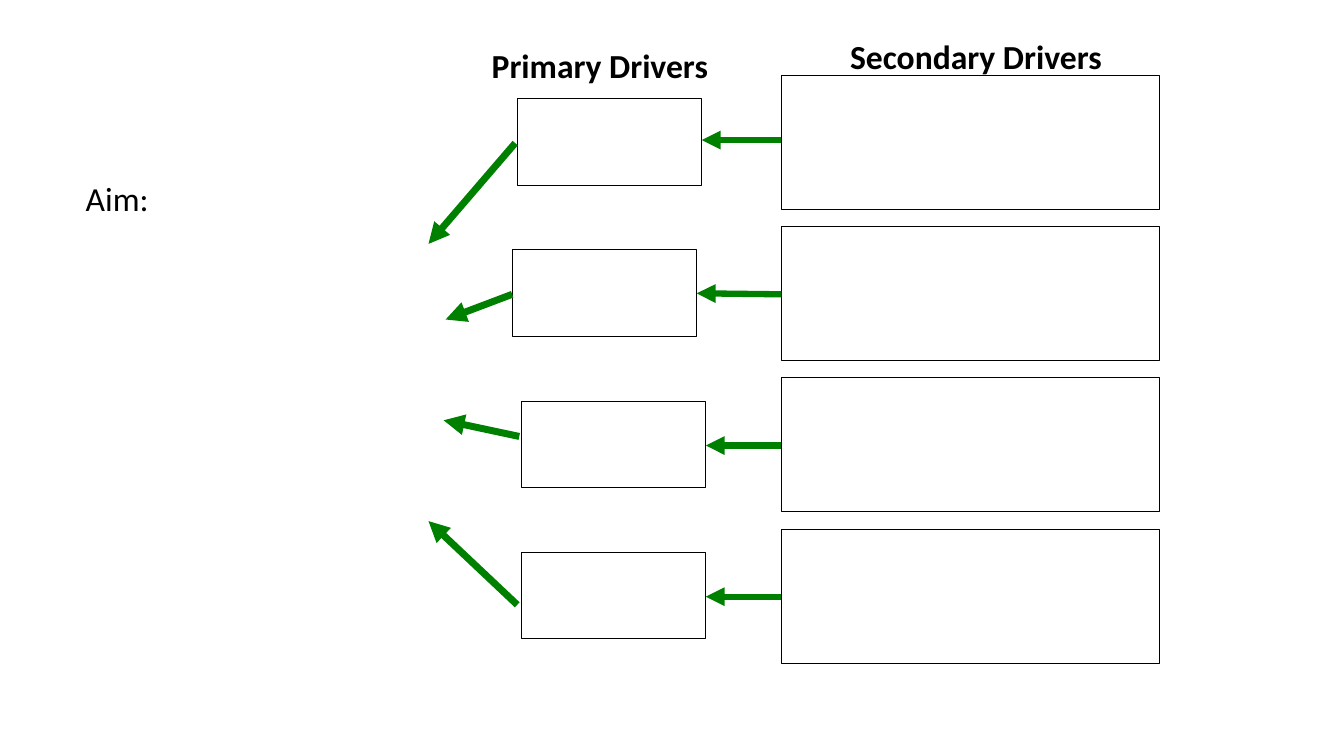
from lxml import etree
from pptx import Presentation
from pptx.dml.color import RGBColor
from pptx.enum.shapes import MSO_CONNECTOR as Connector, MSO_SHAPE as Shape
from pptx.enum.text import MSO_ANCHOR as Anchor, PP_ALIGN as Align
from pptx.oxml.ns import qn
from pptx.util import Inches, Pt

BLACK = RGBColor(0x00, 0x00, 0x00)
WHITE = RGBColor(0xFF, 0xFF, 0xFF)
GREEN = RGBColor(0x00, 0x80, 0x00)

ROW_PITCH = 1.5
PRIMARY_TOP, PRIMARY_SIZE = 0.98, (1.83, 0.86)
SECONDARY_LEFT, SECONDARY_TOP, SECONDARY_SIZE = 7.75, 0.75, (3.75, 1.33)

DRIVER_ROWS = [
    {"primary_left": 5.13, "link_y": (1.39, 1.39), "to_aim": (5.11, 1.42, 4.25, 2.42)},
    {"primary_left": 5.08, "link_y": (2.92, 2.91), "to_aim": (5.08, 2.92, 4.42, 3.17)},
    {"primary_left": 5.17, "link_y": (4.42, 4.42), "to_aim": (5.15, 4.33, 4.40, 4.17)},
    {"primary_left": 5.17, "link_y": (5.92, 5.92), "to_aim": (5.13, 6.00, 4.25, 5.17)},
]


class DriverDiagram:
    font = {"name": "Calibri", "size": Pt(24)}

    def __init__(self, slide):
        self.shapes = slide.shapes

    def label(self, text, left, top, width, height, align=Align.CENTER,
              bold=True, inset_left=0.06, inset_top=0.03):
        frame = self.shapes.add_textbox(
            *map(Inches, (left, top, width, height))).text_frame
        layout = {
            "word_wrap": True,
            "vertical_anchor": Anchor.TOP,
            "margin_left": Inches(inset_left),
            "margin_top": Inches(inset_top),
            "margin_right": Inches(0.06),
            "margin_bottom": Inches(0.03),
        }
        for name, value in layout.items():
            setattr(frame, name, value)
        paragraph = frame.paragraphs[0]
        paragraph.alignment = align
        run = paragraph.add_run()
        run.text = text
        for name, value in {**self.font, "bold": bold}.items():
            setattr(run.font, name, value)
        run.font.color.rgb = BLACK

    def box(self, left, top, width, height):
        driver = self.shapes.add_shape(
            Shape.RECTANGLE, *map(Inches, (left, top, width, height)))
        driver.shadow.inherit = False
        driver.fill.solid()
        driver.fill.fore_color.rgb = WHITE
        driver.line.color.rgb = BLACK
        driver.line.width = Pt(0.75)

    def arrow(self, start_x, start_y, end_x, end_y, weight):
        link = self.shapes.add_connector(
            Connector.STRAIGHT, *map(Inches, (start_x, start_y, end_x, end_y)))
        link.line.color.rgb = GREEN
        link.line.width = Pt(weight)
        properties = link.element.spPr
        outline = properties.find(qn("a:ln"))
        etree.SubElement(outline, qn("a:tailEnd"), type="triangle")
        etree.SubElement(properties, qn("a:effectLst"))


def main():
    deck = Presentation()
    deck.slide_width, deck.slide_height = Inches(13.33), Inches(7.5)
    diagram = DriverDiagram(deck.slides.add_slide(deck.slide_layouts[6]))

    diagram.label("Aim:", 0.6, 1.46, 2.17, 3.42, align=Align.LEFT,
                  bold=False, inset_left=0.25, inset_top=0.3)
    diagram.label("Primary Drivers", 4.15, 0.42, 3.6, 0.5)
    diagram.label("Secondary Drivers", 7.69, 0.33, 3.98, 0.33)

    for index, row in enumerate(DRIVER_ROWS):
        offset = index * ROW_PITCH
        primary_left = row["primary_left"]
        start_y, end_y = row["link_y"]
        diagram.box(primary_left, PRIMARY_TOP + offset, *PRIMARY_SIZE)
        diagram.box(SECONDARY_LEFT, SECONDARY_TOP + offset, *SECONDARY_SIZE)
        diagram.arrow(*row["to_aim"], weight=5)
        diagram.arrow(SECONDARY_LEFT, start_y,
                      primary_left + PRIMARY_SIZE[0], end_y, weight=4.5)

    deck.save("out.pptx")


if __name__ == "__main__":
    main()
